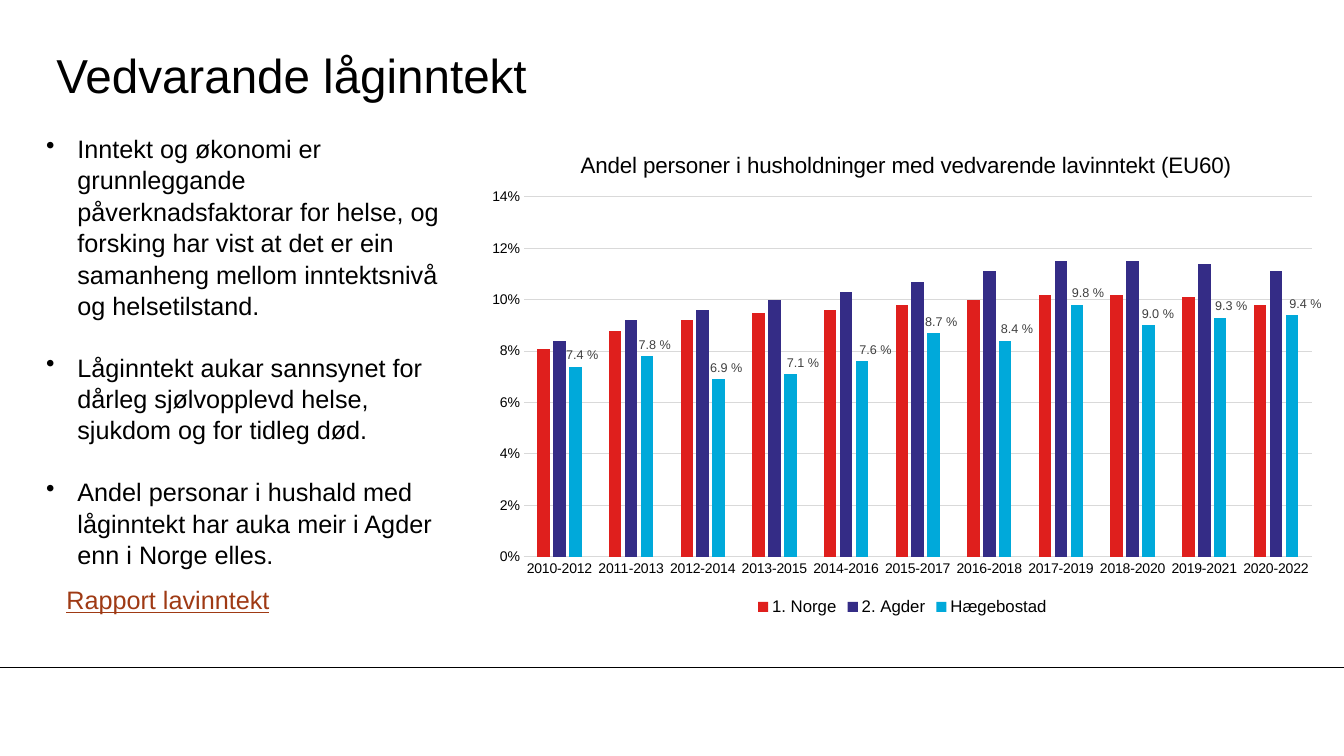
from lxml import etree
from pptx import Presentation
from pptx.chart.data import CategoryChartData
from pptx.dml.color import RGBColor
from pptx.enum.chart import XL_CHART_TYPE, XL_LABEL_POSITION, XL_LEGEND_POSITION, XL_TICK_MARK
from pptx.enum.shapes import MSO_CONNECTOR
from pptx.enum.text import MSO_ANCHOR
from pptx.oxml import parse_xml
from pptx.oxml.ns import nsdecls, qn
from pptx.util import Inches, Pt

COLUMNS = XL_CHART_TYPE.COLUMN_CLUSTERED
OUTSIDE = XL_LABEL_POSITION.OUTSIDE_END
BOTTOM = XL_LEGEND_POSITION.BOTTOM
NO_TICK = XL_TICK_MARK.NONE
STRAIGHT = MSO_CONNECTOR.STRAIGHT
MIDDLE = MSO_ANCHOR.MIDDLE

WIDTH, HEIGHT = 13.33, 7.5
FONT = "Arial"
BLACK, GRID, LABEL, LINK = "000000", "D9D9D9", "404040", "9F3A14"
FOOTER_LINE = 6.62
INDENT = 0.31

TITLE = "Vedvarande låginntekt"
BULLETS = [
    "Inntekt og økonomi er grunnleggande påverknadsfaktorar for helse, og forsking "
    "har vist at det er ein samanheng mellom inntektsnivå og helsetilstand.",
    "Låginntekt aukar sannsynet for dårleg sjølvopplevd helse, sjukdom og for tidleg død.",
    "Andel personar i hushald med låginntekt har auka meir i Agder enn i Norge elles.",
]
REPORT = "Rapport lavinntekt"

CHART_TITLE = "Andel personer i husholdninger med vedvarende lavinntekt (EU60)"
PERIODS = [f"{year}-{year + 2}" for year in range(2010, 2021)]
SERIES = [
    ("1. Norge", "DF1F1D",
     [0.081, 0.088, 0.092, 0.095, 0.096, 0.098, 0.1, 0.102, 0.102, 0.101, 0.098]),
    ("2. Agder", "342C86",
     [0.084, 0.092, 0.096, 0.1, 0.103, 0.107, 0.111, 0.115, 0.115, 0.114, 0.111]),
    ("Hægebostad", "00A9DA",
     [0.074, 0.078, 0.069, 0.071, 0.076, 0.087, 0.084, 0.098, 0.09, 0.093, 0.094]),
]
LABEL_SHIFTS = [0.008, 0.009, 0.009, 0.015, 0.016, 0.009, 0.014, 0.013, 0.011, 0.013, 0.016]


def color(value):
    """Turn a hex string into a colour."""
    return RGBColor.from_string(value)


def set_font(font, size, value=BLACK):
    """Apply the slide's typeface with a size and colour."""
    font.name, font.size, font.bold = FONT, Pt(size), False
    font.color.rgb = color(value)


def add_text(slide, box, lines, size, value=BLACK, inset=0.1):
    """Add a wrapping text box and return its frame."""
    frame = slide.shapes.add_textbox(*map(Inches, box)).text_frame
    frame.word_wrap = True
    frame.margin_left = frame.margin_right = Inches(inset)
    frame.margin_top = frame.margin_bottom = Inches(inset / 2)
    frame.text = "\n".join(lines)
    for paragraph in frame.paragraphs:
        set_font(paragraph.font, size, value)
    return frame


def add_bullets(slide):
    """Add the bulleted findings."""
    frame = add_text(slide, (0.36, 1.26, 4.24, 4.34), BULLETS, 18)
    for index, paragraph in enumerate(frame.paragraphs):
        paragraph.line_spacing = 1.04
        paragraph.space_before = Pt(21.6 if index else 0)
        properties = paragraph._p.get_or_add_pPr()
        properties.set("marL", str(Inches(INDENT)))
        properties.set("indent", str(-Inches(INDENT)))
        bullet = parse_xml(f'<a:buChar {nsdecls("a")} char="•"/>')
        properties.find(qn("a:defRPr")).addprevious(bullet)


def make_layout(**values):
    """Build a manual chart layout from shares of the chart area."""
    layout = etree.Element(qn("c:layout"))
    manual = etree.SubElement(layout, qn("c:manualLayout"))
    for name, value in values.items():
        etree.SubElement(manual, qn(f"c:{name}")).set("val", str(value))
    return layout


def place(element, layout, predecessor):
    """Put a layout in a chart element, after the named child if there is one."""
    for present in element.findall(qn("c:layout")):
        element.remove(present)
    previous = element.find(qn(predecessor))
    if previous is None:
        element.insert(0, layout)
    else:
        previous.addnext(layout)


def add_labels(series):
    """Label each column, shifted a little to the right."""
    for index, shift in enumerate(LABEL_SHIFTS):
        label = series.points[index].data_label
        set_font(label.font, 9, LABEL)
        label.position = OUTSIDE
    for element, shift in zip(series._element.iter(qn("c:dLbl")), LABEL_SHIFTS):
        layout = make_layout(x=shift, y=0)
        place(element, layout, "c:idx")
        layout.addnext(parse_xml(
            f'<c:numFmt {nsdecls("c")} formatCode="0.0\\ %" sourceLinked="0"/>'))


def add_income_chart(slide):
    """Add the clustered column chart of persistent low income."""
    data = CategoryChartData(number_format="0.0%")
    data.categories = PERIODS
    for name, _, values in SERIES:
        data.add_series(name, values)
    box = map(Inches, (4.72, 1.26, 8.46, 4.89))
    chart = slide.shapes.add_chart(COLUMNS, *box, data).chart
    set_font(chart.font, 10)

    title = chart.chart_title
    title.text_frame.text = CHART_TITLE
    set_font(title.text_frame.paragraphs[0].font, 16)
    place(title._element, make_layout(xMode="edge", yMode="edge", x=0.118, y=0.04), "c:tx")
    title.include_in_layout = False

    chart.has_legend = True
    chart.legend.position = BOTTOM
    chart.legend.include_in_layout = False
    set_font(chart.legend.font, 12)

    plot = chart.plots[0]
    plot.gap_width, plot.overlap, plot.vary_by_categories = 219, -27, False
    for series, (_, value, _) in zip(plot.series, SERIES):
        series.format.fill.solid()
        series.format.fill.fore_color.rgb = color(value)
        series.invert_if_negative = False
    add_labels(plot.series[-1])

    values_axis, periods_axis = chart.value_axis, chart.category_axis
    for axis in (values_axis, periods_axis):
        axis.major_tick_mark = axis.minor_tick_mark = NO_TICK
        set_font(axis.tick_labels.font, 10)
    values_axis.minimum_scale, values_axis.maximum_scale = 0, 0.14
    values_axis.major_unit = 0.02
    values_axis.tick_labels.number_format = "0%"
    values_axis.tick_labels.number_format_is_linked = False
    values_axis.format.line.fill.background()
    for line in (values_axis.major_gridlines.format.line, periods_axis.format.line):
        line.color.rgb, line.width = color(GRID), Pt(0.75)

    area = plot._element.getparent()
    place(area, make_layout(layoutTarget="inner", xMode="edge", yMode="edge",
                            x=0.056, y=0.142, w=0.924, h=0.73), "c:none")


def main():
    """Build and save the slide."""
    presentation = Presentation()
    presentation.slide_width, presentation.slide_height = Inches(WIDTH), Inches(HEIGHT)
    slide = presentation.slides.add_slide(presentation.slide_layouts[6])

    line = slide.shapes.add_connector(
        STRAIGHT, 0, Inches(FOOTER_LINE), Inches(WIDTH), Inches(FOOTER_LINE))
    line.line.color.rgb, line.line.width = color(BLACK), Pt(0.75)
    etree.SubElement(line._element.spPr, qn("a:effectLst"))

    title = add_text(slide, (0.56, 0.36, 11.1, 0.75), [TITLE], 34, inset=0)
    title.vertical_anchor = MIDDLE
    add_bullets(slide)
    report = add_text(slide, (0.56, 5.75, 2.65, 0.4), [REPORT], 18, LINK)
    report.paragraphs[0].font.underline = True
    add_income_chart(slide)
    presentation.save("out.pptx")


if __name__ == "__main__":
    main()
